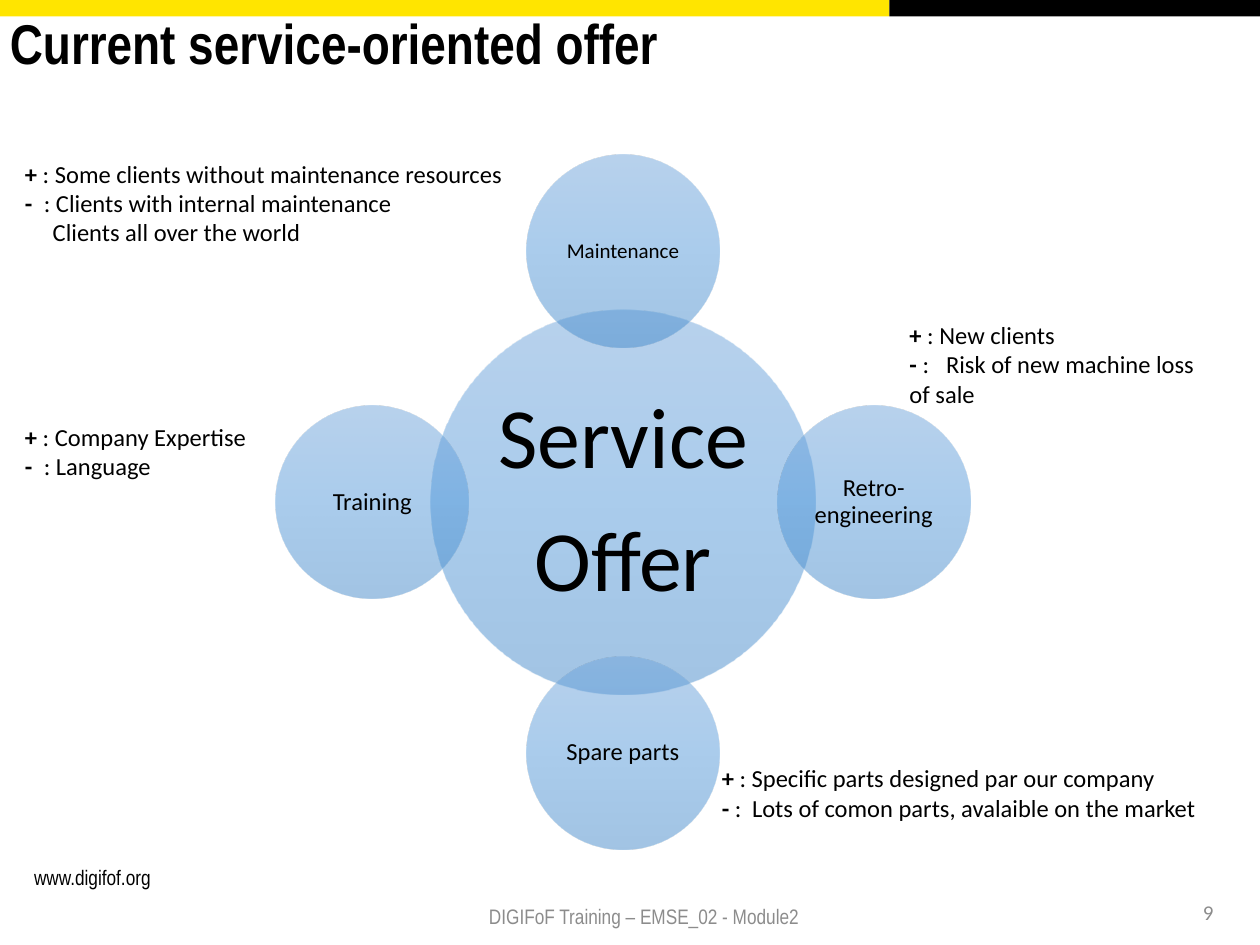
from lxml import etree
from pptx import Presentation
from pptx.dml.color import RGBColor
from pptx.enum.shapes import MSO_SHAPE as Shape
from pptx.enum.text import MSO_ANCHOR as Anchor, PP_ALIGN as Align
from pptx.oxml import parse_xml
from pptx.oxml.ns import nsdecls, qn
from pptx.util import Inches, Pt

BLACK, YELLOW, GREY = "000000", "FFE500", "8C8C8C"
GRADIENT = [(0, "71A6DB"), (50, "559BDB"), (100, "448ACA")]


def color(value):
    return RGBColor.from_string(value)


def write(frame, paragraphs, size=14, font="Calibri", fill=BLACK, bold=False,
          align=Align.LEFT, anchor=Anchor.TOP, inset=(0.1, 0.05),
          spacing=None, after=0):
    """Fill a frame; a paragraph is a string or a list of (text, bold) pairs."""
    frame.word_wrap = True
    frame.vertical_anchor = anchor
    frame.margin_left = frame.margin_right = Inches(inset[0])
    frame.margin_top = frame.margin_bottom = Inches(inset[1])
    for index, content in enumerate(paragraphs):
        para = frame.add_paragraph() if index else frame.paragraphs[0]
        para.alignment = align
        if spacing:
            para.line_spacing = spacing
        if after:
            para.space_after = Pt(after)
        parts = [(content, bold)] if isinstance(content, str) else content
        for text, strong in parts:
            span = para.add_run()
            span.text = text
            span.font.size = Pt(size)
            span.font.name = font
            span.font.bold = strong
            span.font.color.rgb = color(fill)


def add_text(page, box, paragraphs, **style):
    shape = page.shapes.add_textbox(*map(Inches, box))
    write(shape.text_frame, paragraphs, **style)
    return shape.text_frame


def add_shape(page, kind, box):
    shape = page.shapes.add_shape(kind, *map(Inches, box))
    shape.shadow.inherit = False
    shape.line.fill.background()
    return shape


def add_top_band(page, left, top, width, height):
    split = 7.06
    for start, end, fill in [(0, split, YELLOW), (split, width, BLACK)]:
        bar = add_shape(page, Shape.RECTANGLE, (left + start, top, end - start, height))
        bar.fill.solid()
        bar.fill.fore_color.rgb = color(fill)


def add_circle(page, center_x, center_y, diameter, lines, size, inset):
    box = (center_x - diameter / 2, center_y - diameter / 2, diameter, diameter)
    circle = add_shape(page, Shape.OVAL, box)
    # Half-transparent vertical gradient
    stops = "".join(
        f'<a:gs pos="{pos * 1000}"><a:srgbClr val="{value}">'
        f'<a:alpha val="50000"/></a:srgbClr></a:gs>' for pos, value in GRADIENT)
    gradient = parse_xml(
        f'<a:gradFill {nsdecls("a")} rotWithShape="1"><a:gsLst>{stops}</a:gsLst>'
        f'<a:lin ang="5400000" scaled="0"/></a:gradFill>')
    circle._element.spPr.find(qn("a:prstGeom")).addnext(gradient)
    write(circle.text_frame, lines, size=size, align=Align.CENTER,
          anchor=Anchor.MIDDLE, inset=(inset, inset), spacing=0.9,
          after=size * 0.35)


def add_service_diagram(page, left, top, width):
    hub, satellite = 3.05, 1.53
    center_x, center_y = left + width / 2, top + width / 2
    orbit = (width - satellite) / 2
    add_circle(page, center_x, center_y, hub, ["Service", "Offer"], 49, 0.07)
    satellites = [("Maintenance", 12, 0, -1), ("Retro-engineering", 14, 1, 0),
                  ("Spare parts", 14, 0, 1), ("Training", 14, -1, 0)]
    for label, size, step_x, step_y in satellites:
        add_circle(page, center_x + step_x * orbit, center_y + step_y * orbit,
                   satellite, [label], size, 0.02)


def add_pros_cons(page, box, pro, con, tab, extra=None):
    """Write a plus line and a minus line; the tab stop aligns the minus text."""
    paragraphs = [[("+", True), (f" : {pro}", False)], [("-", True), (con, False)]]
    if extra:
        paragraphs.append(extra)
    frame = add_text(page, box, paragraphs)
    minus = frame.paragraphs[1]._p.get_or_add_pPr()
    tabs = etree.SubElement(minus, qn("a:tabLst"))
    etree.SubElement(tabs, qn("a:tab"), pos=str(Inches(tab)), algn="l")
    if extra:
        frame.paragraphs[2]._p.get_or_add_pPr().set("marL", str(Inches(0.22)))


def add_footer(page, top):
    add_text(page, (0.2, top, 2.19, 0.5), ["www.digifof.org"], size=12,
             font="Arial Narrow", inset=(0.07, 0.04))
    style = dict(size=12, fill=GREY, align=Align.RIGHT, anchor=Anchor.MIDDLE)
    add_text(page, (2.95, top + 0.25, 3.49, 0.4),
             ["DIGIFoF Training – EMSE_02 - Module2"], font="Arial Narrow", **style)
    add_text(page, (7.48, top + 0.22, 2.25, 0.4), ["9"], **style)


def main():
    deck = Presentation()
    deck.slide_width, deck.slide_height = Inches(10), Inches(7.5)
    page = deck.slides.add_slide(deck.slide_layouts[6])

    # Header
    add_top_band(page, 0, 0, 10, 0.13)
    add_text(page, (-0.02, 0.08, 6.38, 1.45), ["Current service-oriented offer"],
             size=32, font="Arial Narrow", bold=True, spacing=0.9)

    # Hub and its four services
    add_service_diagram(page, 2.19, 1.23, 5.51)

    # Strengths and weaknesses of each service
    add_pros_cons(page, (0.1, 1.21, 5.06, 0.81),
                  "Some clients without maintenance resources",
                  "\t: Clients with internal maintenance", 0.15,
                  extra="Clients all over the world")
    add_pros_cons(page, (7.12, 2.49, 2.6, 0.81), "New clients",
                  " :\tRisk of new machine loss of sale", 0.29)
    add_pros_cons(page, (5.63, 6.01, 4.22, 0.57),
                  "Specific parts designed par our company",
                  " :\tLots of comon parts, avalaible on the market", 0.24)
    add_pros_cons(page, (0.1, 3.3, 5.06, 0.57), "Company Expertise",
                  "\t: Language", 0.15)

    add_footer(page, 6.82)
    deck.save("out.pptx")


if __name__ == "__main__":
    main()
